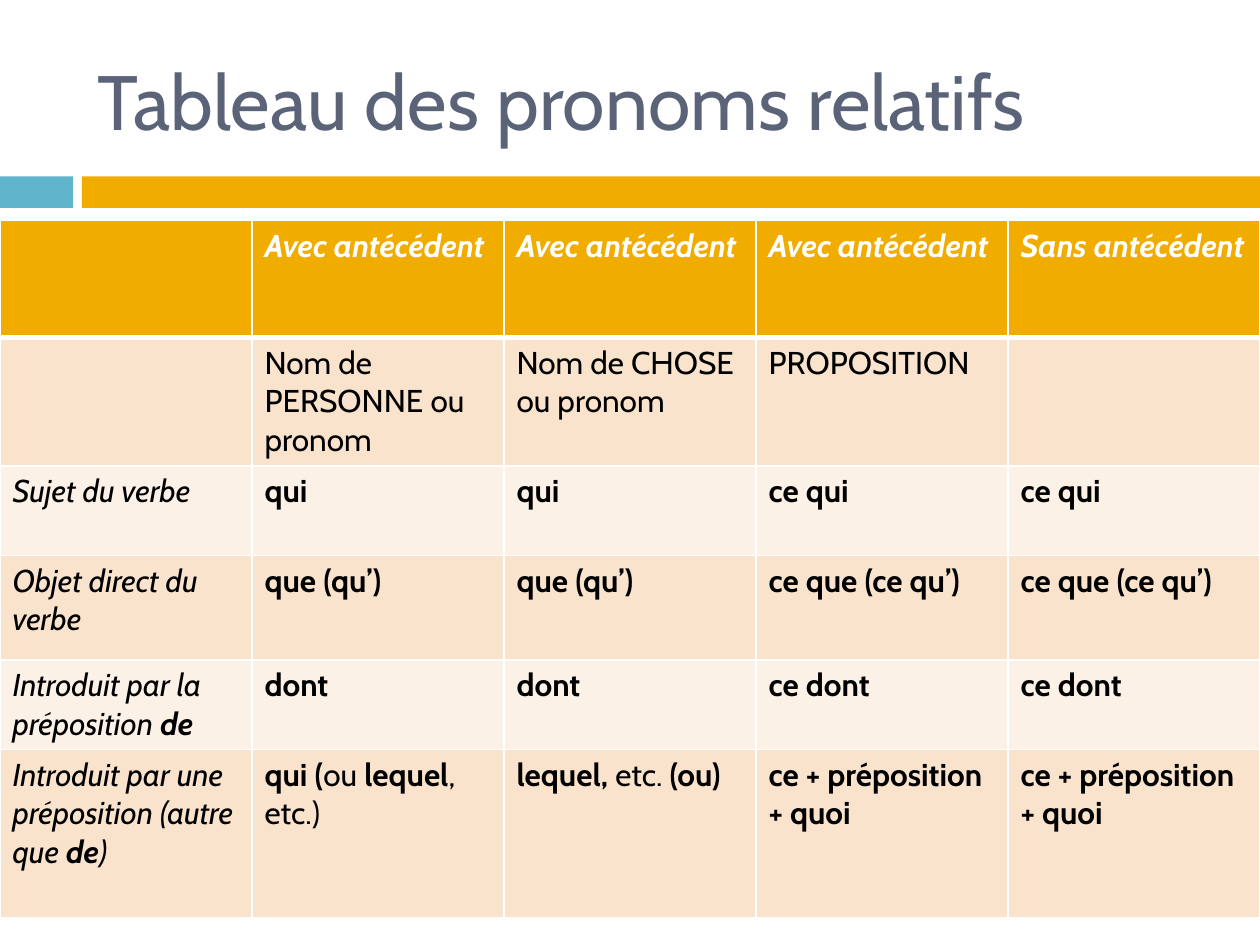
from lxml import etree
from pptx import Presentation
from pptx.dml.color import RGBColor
from pptx.enum.shapes import MSO_SHAPE
from pptx.enum.text import MSO_ANCHOR, MSO_AUTO_SIZE, PP_ALIGN
from pptx.oxml.ns import qn
from pptx.util import Inches, Pt

RECTANGLE = MSO_SHAPE.RECTANGLE
MIDDLE = MSO_ANCHOR.MIDDLE
LEFT = PP_ALIGN.LEFT
NO_AUTOFIT = MSO_AUTO_SIZE.NONE
FONT = "Cabin"
COLORS = {
    "title": "5A6378",
    "blue": "60B5CC",
    "gold": "F0AD00",
    "dark_band": "F9E3CC",
    "light_band": "FCF1E7",
    "white": "FFFFFF",
    "black": "000000",
}
COLUMN_WIDTH = 2
ROW_HEIGHTS = [0.93, 1.02, 0.71, 0.83, 0.71, 1.33]
BOLD_MARK = "*"
ROWS = [
    ["", "*Avec antécédent*", "*Avec antécédent*", "*Avec antécédent*", "*Sans antécédent*"],
    ["", "Nom de PERSONNE ou pronom", "Nom de CHOSE ou pronom", "PROPOSITION", ""],
    ["Sujet du verbe", "*qui*", "*qui*", "*ce qui*", "*ce qui*"],
    ["Objet direct du verbe", "*que (qu’)*", "*que (qu’)*", "*ce que (ce qu’)*", "*ce que (ce qu’)*"],
    ["Introduit par la préposition *de*", "*dont*", "*dont*", "*ce dont*", "*ce dont*"],
    [
        "Introduit par une préposition (autre que *de*)",
        "*qui (*ou *lequel*, etc.)",
        "*lequel, *etc. *(ou)*",
        "*ce + préposition + quoi*",
        "*ce + préposition + quoi*",
    ],
]


def rgb(name):
    return RGBColor.from_string(COLORS[name])


def add_run(paragraph, text, size, color, bold=False, italic=False):
    run = paragraph.add_run()
    run.text = text
    font = run.font
    font.name = FONT
    font.size = Pt(size)
    font.bold = bold
    font.italic = italic
    font.color.rgb = rgb(color)


def add_bar(slide, left, width, color):
    shape = slide.shapes.add_shape(
        RECTANGLE, Inches(left), Inches(1.4), Inches(width), Inches(0.25)
    )
    shape.shadow.inherit = False
    shape.fill.solid()
    shape.fill.fore_color.rgb = rgb(color)
    shape.line.fill.background()


def format_title(slide, text):
    title = slide.shapes.title
    title.left, title.top = Inches(0.67), Inches(0.25)
    title.width, title.height = Inches(8.92), Inches(1.08)
    frame = title.text_frame
    frame.word_wrap = True
    frame.auto_size = NO_AUTOFIT
    frame.vertical_anchor = MIDDLE
    paragraph = frame.paragraphs[0]
    paragraph.alignment = LEFT
    add_run(paragraph, text, 44, "title")


def set_borders(cell, bottom_width):
    properties = cell._tc.get_or_add_tcPr()
    widths = {"a:lnL": 1, "a:lnR": 1, "a:lnT": 1, "a:lnB": bottom_width}
    for position, (tag, width) in enumerate(widths.items()):
        line = etree.Element(qn(tag), w=str(Pt(width)))
        fill = etree.SubElement(line, qn("a:solidFill"))
        etree.SubElement(fill, qn("a:srgbClr"), val=COLORS["white"])
        properties.insert(position, line)


def fill_cell(cell, text, row, column):
    header = row == 0
    band = "dark_band" if row % 2 else "light_band"
    cell.fill.solid()
    cell.fill.fore_color.rgb = rgb("gold" if header else band)
    set_borders(cell, 3 if header else 1)
    paragraph = cell.text_frame.paragraphs[0]
    for index, part in enumerate(text.split(BOLD_MARK)):
        if part:
            add_run(
                paragraph,
                part,
                18,
                "white" if header else "black",
                bold=index % 2 == 1,
                italic=header or column == 0,
            )


def add_pronoun_table(slide):
    column_count = len(ROWS[0])
    table = slide.shapes.add_table(
        len(ROWS), column_count, Inches(0), Inches(1.75),
        Inches(COLUMN_WIDTH * column_count), Inches(sum(ROW_HEIGHTS)),
    ).table
    for column in table.columns:
        column.width = Inches(COLUMN_WIDTH)
    for row, (height, texts) in enumerate(zip(ROW_HEIGHTS, ROWS)):
        table.rows[row].height = Inches(height)
        for column, text in enumerate(texts):
            fill_cell(table.cell(row, column), text, row, column)


def main():
    presentation = Presentation()
    presentation.slide_width = Inches(10)
    presentation.slide_height = Inches(7.5)
    slide = presentation.slides.add_slide(presentation.slide_layouts[5])
    add_bar(slide, 0, 0.58, "blue")
    add_bar(slide, 0.65, 9.35, "gold")
    format_title(slide, "Tableau des pronoms relatifs")
    add_pronoun_table(slide)
    presentation.save("out.pptx")


if __name__ == "__main__":
    main()
